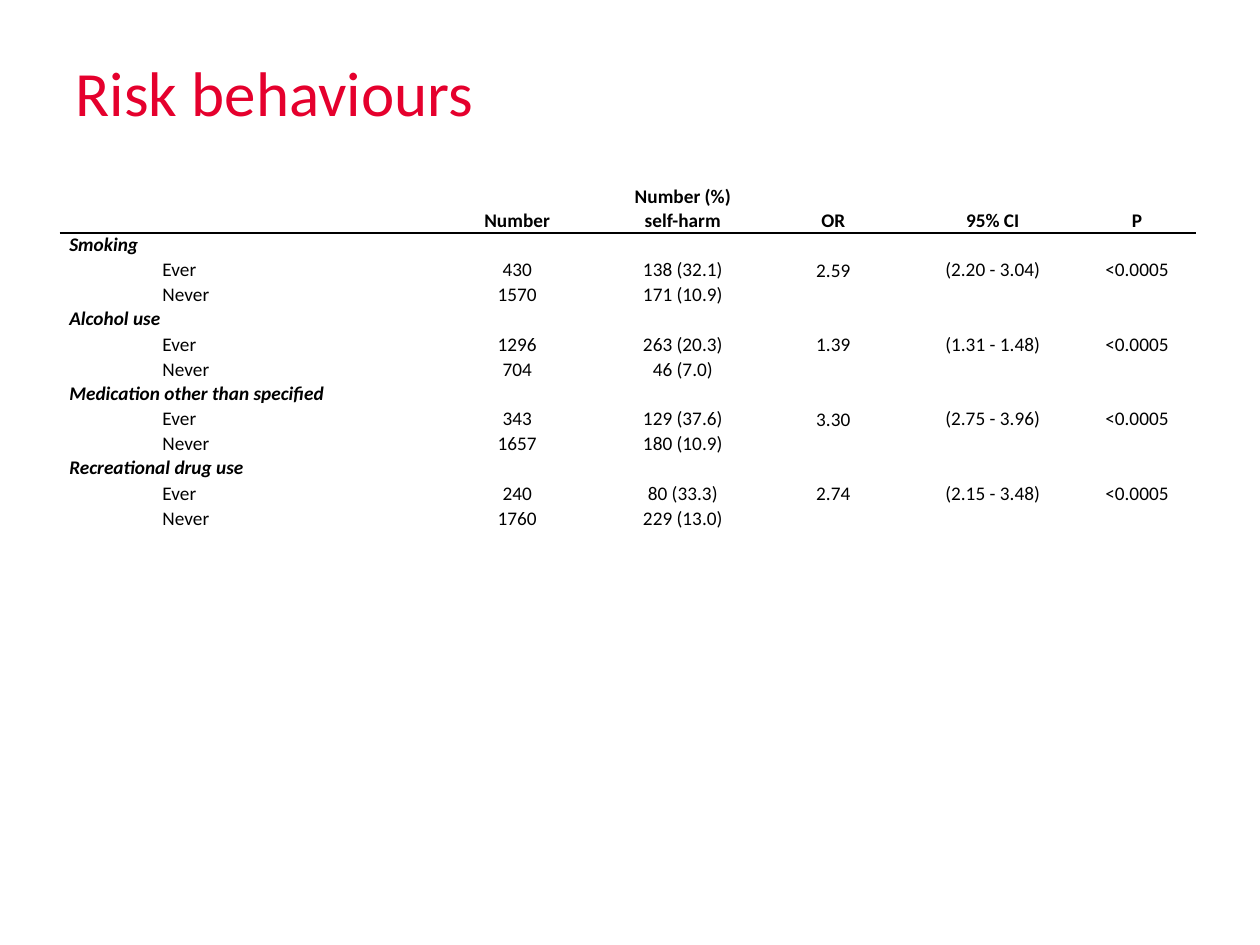
from lxml import etree
from pptx import Presentation
from pptx.dml.color import RGBColor
from pptx.enum.text import MSO_ANCHOR, PP_ALIGN
from pptx.oxml.ns import qn
from pptx.util import Inches, Pt

LEFT, CENTER = PP_ALIGN.LEFT, PP_ALIGN.CENTER
TOP, MIDDLE, BOTTOM = MSO_ANCHOR.TOP, MSO_ANCHOR.MIDDLE, MSO_ANCHOR.BOTTOM

FONT = "Calibri"
RED, BLACK = "E5002D", "000000"
TEXT_SIZE = 11
COLUMN_WIDTHS = [0.74, 2.18, 1.41, 1.22, 1.17, 1.36, 0.93]
HEADER_HEIGHT, BODY_HEIGHT = 0.37, 2.37
HEADERS = ["", "", "Number", "Number (%)\nself-harm", "OR", "95% CI", "P"]
BEHAVIOURS = [
    ("Smoking",
     ["430", "138 (32.1)", "2.59", "(2.20 - 3.04)", "<0.0005"],
     ["1570", "171 (10.9)"]),
    ("Alcohol use",
     ["1296", "263 (20.3)", "1.39", "(1.31 - 1.48)", "<0.0005"],
     ["704", "46 (7.0)"]),
    ("Medication other than specified",
     ["343", "129 (37.6)", "3.30", "(2.75 - 3.96)", "<0.0005"],
     ["1657", "180 (10.9)"]),
    ("Recreational drug use",
     ["240", "80 (33.3)", "2.74", "(2.15 - 3.48)", "<0.0005"],
     ["1760", "229 (13.0)"]),
]


def color(value):
    return RGBColor.from_string(value)


def style_font(font, size, value, bold=False, italic=False):
    font.name = FONT
    font.size = Pt(size)
    font.color.rgb = color(value)
    font.bold = bold
    font.italic = italic


def add_title(page, text):
    title = page.shapes.title
    title.left, title.top = Inches(0.5), Inches(0.3)
    title.width, title.height = Inches(9), Inches(0.85)
    title.text_frame.text = text
    title.text_frame.vertical_anchor = MIDDLE
    para = title.text_frame.paragraphs[0]
    para.alignment = LEFT
    style_font(para.font, 36, RED)


def fill_cell(cell, text, align=CENTER, anchor=MIDDLE, bold=False, italic=False):
    cell.text = text
    cell.vertical_anchor = anchor
    for para in cell.text_frame.paragraphs:
        para.alignment = align
        style_font(para.font, TEXT_SIZE, BLACK, bold, italic)


def prepare_cell(cell):
    cell.fill.background()
    cell.margin_left = cell.margin_right = Inches(0.07)
    cell.margin_top = cell.margin_bottom = 0
    if not cell.text:
        end = etree.SubElement(cell.text_frame.paragraphs[0]._p, qn("a:endParaRPr"))
        end.set("sz", str(TEXT_SIZE * 100))


def add_border(cell, side):
    line = etree.Element(qn(f"a:{side}"), w=str(Pt(1)))
    fill = etree.SubElement(line, qn("a:solidFill"))
    etree.SubElement(fill, qn("a:srgbClr"), val=BLACK)
    cell._tc.get_or_add_tcPr().insert(0, line)


def fill_behaviour(table, row, name, ever, never):
    last = len(COLUMN_WIDTHS) - 1
    table.cell(row, 0).merge(table.cell(row, last))
    fill_cell(table.cell(row, 0), name, LEFT, TOP, bold=True, italic=True)
    for offset, (label, values) in enumerate([("Ever", ever), ("Never", never)], 1):
        fill_cell(table.cell(row + offset, 1), label, LEFT)
        for column, value in enumerate(values, 2):
            anchor = BOTTOM if HEADERS[column] == "OR" else MIDDLE
            fill_cell(table.cell(row + offset, column), value, anchor=anchor)
    table.cell(row + 2, 4).merge(table.cell(row + 2, last))


def add_behaviour_table(page):
    body_rows = 3 * len(BEHAVIOURS)
    frame = page.shapes.add_table(
        body_rows + 1, len(COLUMN_WIDTHS), Inches(0.48), Inches(1.47),
        Inches(sum(COLUMN_WIDTHS)), Inches(HEADER_HEIGHT + BODY_HEIGHT))
    table = frame.table
    table.first_row = table.horz_banding = False
    for column, width in zip(table.columns, COLUMN_WIDTHS):
        column.width = Inches(width)
    for row in table.rows:
        row.height = Inches(BODY_HEIGHT / body_rows)
    table.rows[0].height = Inches(HEADER_HEIGHT)
    for column, text in enumerate(HEADERS):
        if text:
            fill_cell(table.cell(0, column), text, anchor=BOTTOM, bold=True)
    for index, behaviour in enumerate(BEHAVIOURS):
        fill_behaviour(table, 1 + 3 * index, *behaviour)
    for cell in table.iter_cells():
        prepare_cell(cell)
    for column in range(len(COLUMN_WIDTHS)):
        add_border(table.cell(0, column), "lnB")
        add_border(table.cell(1, column), "lnT")


def main():
    deck = Presentation()
    deck.slide_width, deck.slide_height = Inches(10), Inches(7.5)
    page = deck.slides.add_slide(deck.slide_layouts[5])
    add_title(page, "Risk behaviours")
    add_behaviour_table(page)
    deck.save("out.pptx")


if __name__ == "__main__":
    main()
